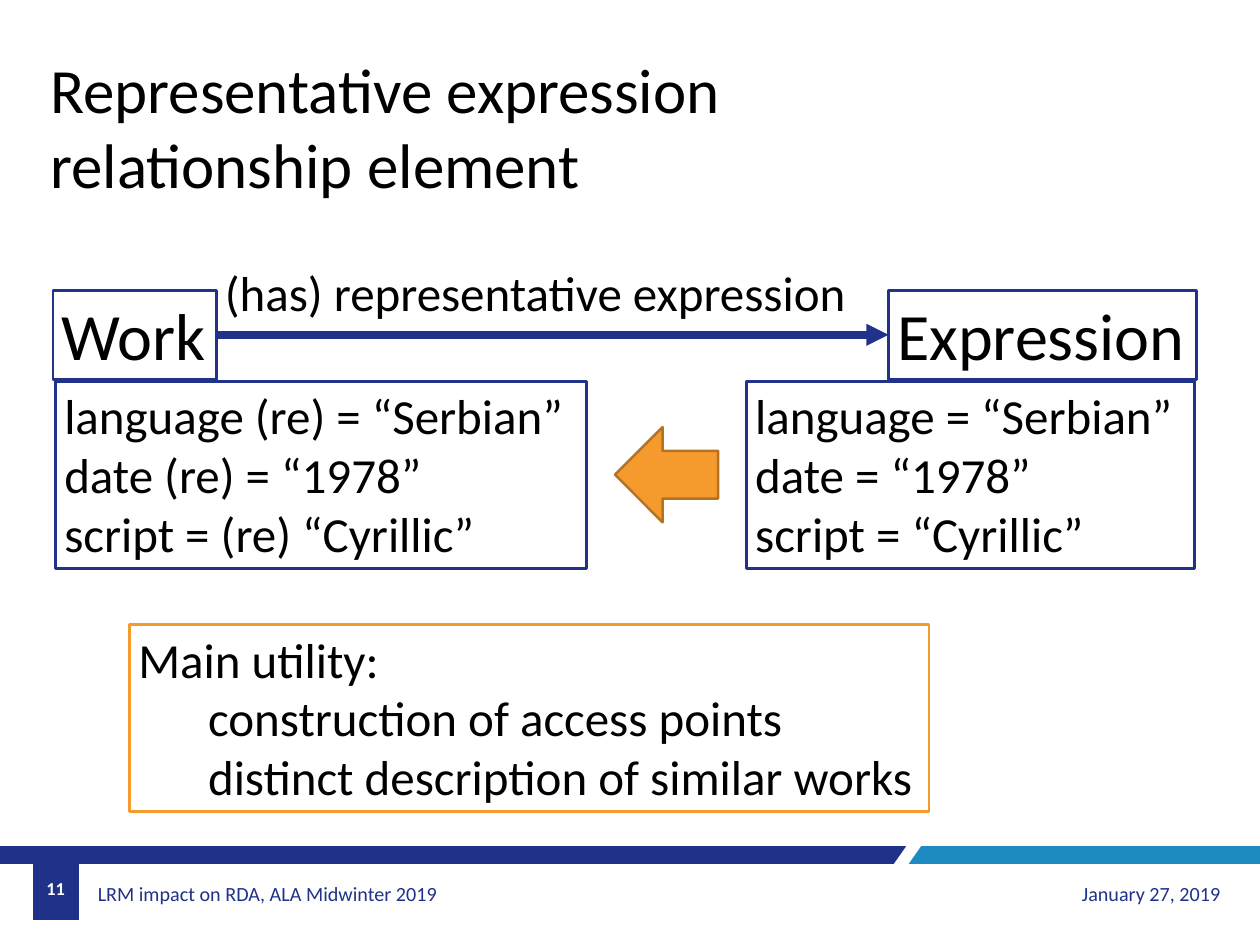
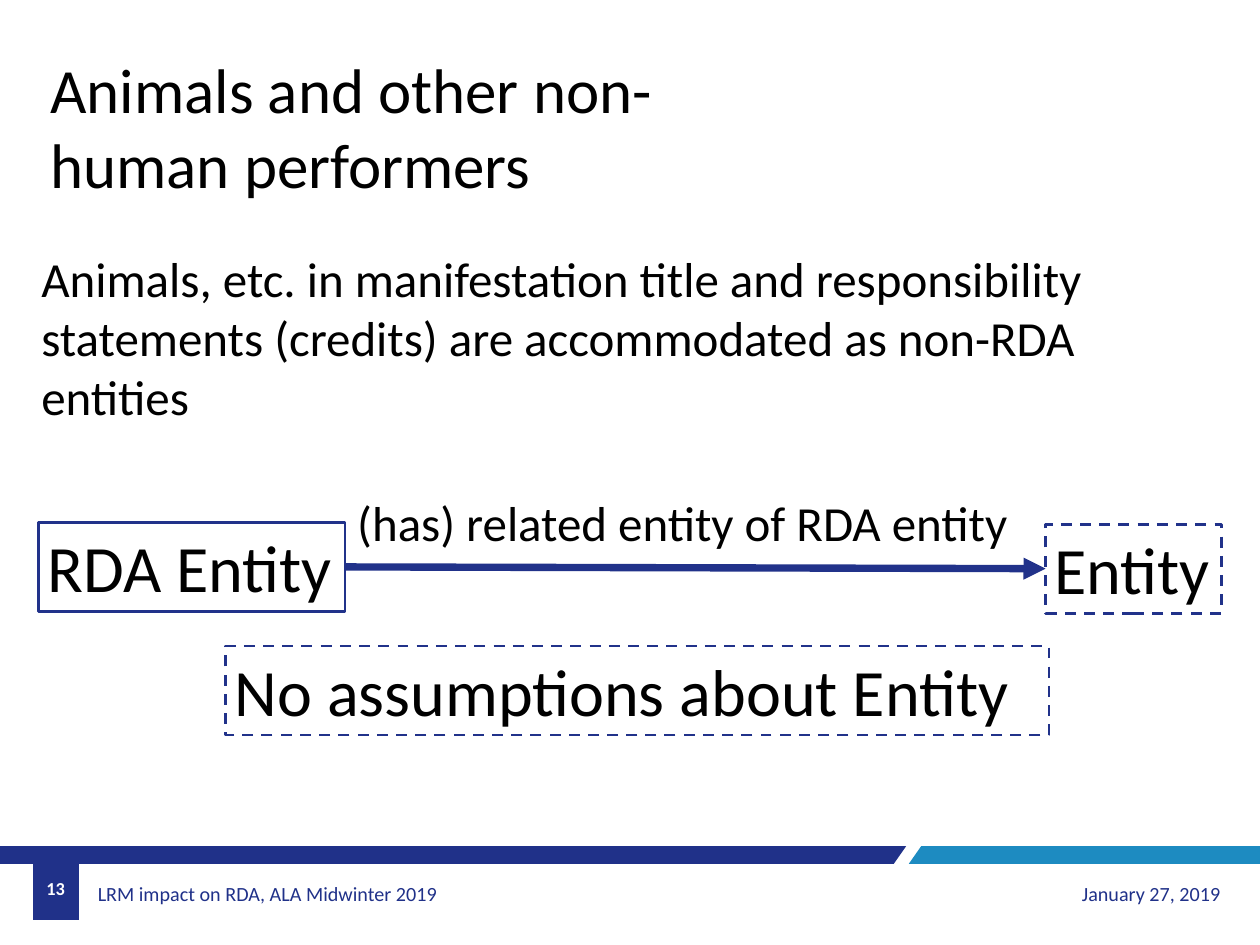
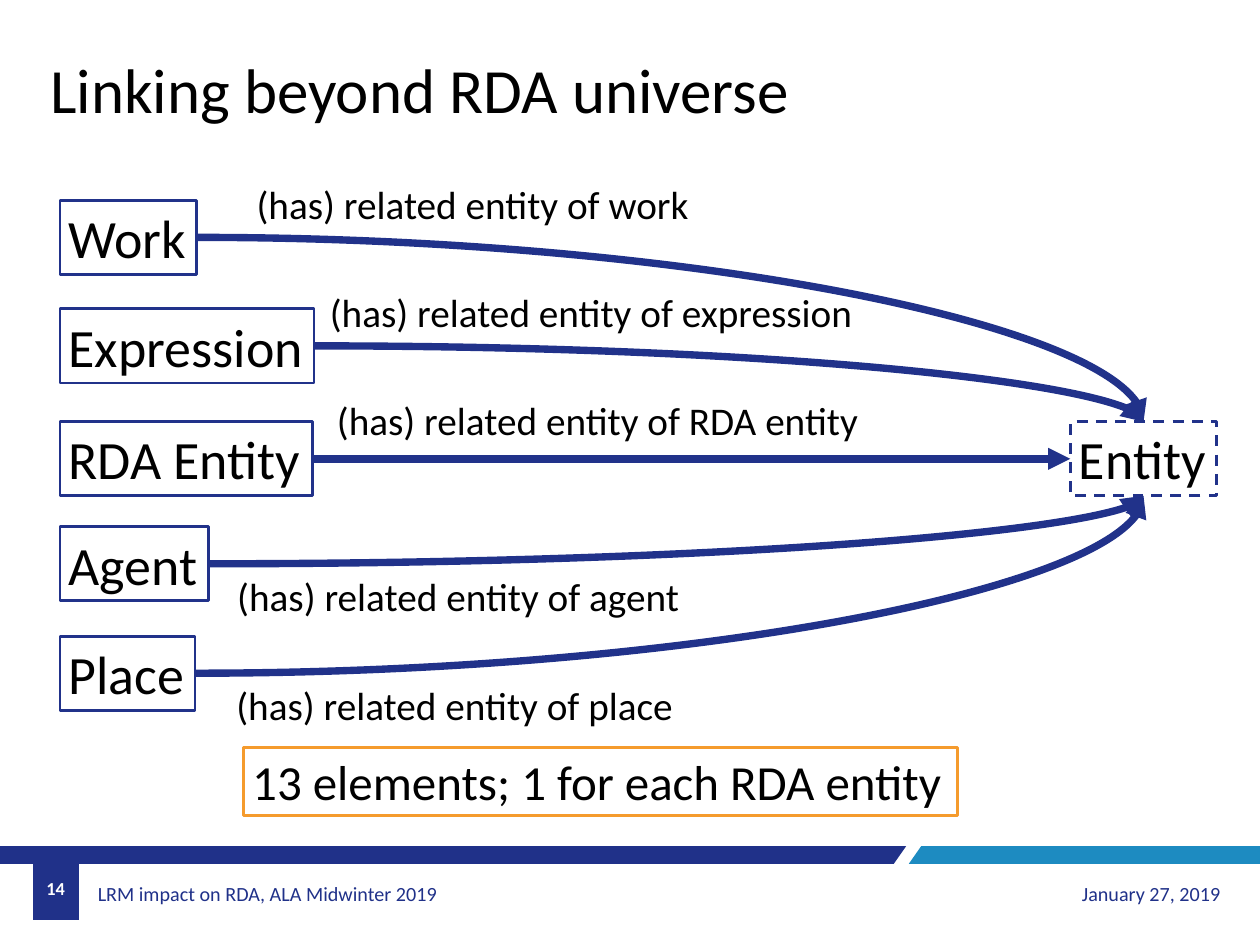
from pptx import Presentation
from pptx.dml.color import RGBColor
from pptx.enum.dml import MSO_LINE
from pptx.enum.shapes import MSO_CONNECTOR, MSO_SHAPE
from pptx.enum.text import MSO_ANCHOR, MSO_AUTO_SIZE, PP_ALIGN
from pptx.oxml.ns import qn
from pptx.util import Inches, Pt
from lxml.etree import SubElement

NAVY = RGBColor(0x20, 0x31, 0x89)
BLUE = RGBColor(0x21, 0x32, 0x8A)
SKY = RGBColor(0x1D, 0x8B, 0xC1)
GOLD = RGBColor(0xF5, 0x9B, 0x2D)
BROWN = RGBColor(0xB5, 0x73, 0x21)
BLACK = RGBColor(0, 0, 0)
WHITE = RGBColor(0xFF, 0xFF, 0xFF)


def put(slide, at, text, size, edge=None, dash=None, title=False,
        color=BLACK, bold=False, align=PP_ALIGN.LEFT, anchor=MSO_ANCHOR.TOP):
    """Write text in the title, in a box with an edge, or in a plain text box."""
    place = [Inches(n) for n in at]
    if title:
        shape = slide.shapes.title
        for name, value in zip(("left", "top", "width", "height"), place):
            setattr(shape, name, value)
    elif edge:
        shape = slide.shapes.add_shape(MSO_SHAPE.RECTANGLE, *place)
        shape.shadow.inherit = False
        shape.fill.solid()
        shape.fill.fore_color.rgb = WHITE
        shape.line.color.rgb = edge
        shape.line.width = Pt(2.25)
        shape.line.dash_style = dash
    else:
        shape = slide.shapes.add_textbox(*place)
    frame = shape.text_frame
    frame.text = text
    form = {"word_wrap": True, "auto_size": MSO_AUTO_SIZE.NONE,
            "vertical_anchor": anchor}
    if edge:
        form["margin_right"] = 0
    for name, value in form.items():
        setattr(frame, name, value)
    for par in frame.paragraphs:
        par.alignment = align
        par.font.color.rgb = color
        for name, value in {"name": "Calibri", "size": Pt(size), "bold": bold}.items():
            setattr(par.font, name, value)
    return shape


def join(slide, start, end, side=1):
    """Draw an arrow from the right of start to a side of end, curved unless side is left."""
    kind = MSO_CONNECTOR.STRAIGHT if side == 1 else MSO_CONNECTOR.CURVE
    link = slide.shapes.add_connector(kind, 0, 0, 0, 0)
    link.begin_connect(start, 3)
    link.end_connect(end, side)
    link.line.color.rgb = BLUE
    link.line.width = Pt(6)
    props = link.element.spPr
    if side != 1:
        props.find(qn("a:prstGeom")).set("prst", "curvedConnector2")
    SubElement(props.find(qn("a:ln")), qn("a:tailEnd"), type="triangle")
    SubElement(props, qn("a:effectLst"))


deck = Presentation()
deck.slide_width, deck.slide_height = Inches(14.28), Inches(10.71)
layout = deck.slide_layouts.get_by_name("Title Only")
for spare in list(layout.placeholders)[1:]:
    spare.element.getparent().remove(spare.element)

# Titles and page numbers
pages = []
for number, title in [
    (11, "Representative expression relationship element"),
    (13, "Animals and other non-human performers"),
    (14, "Linking beyond RDA universe"),
]:
    page = deck.slides.add_slide(layout)
    put(page, (0.47, 0.52, 8.92, 1.83), title, 51.4, title=True)
    put(page, (0.37, 9.79, 0.52, 0.55), str(number), 14.9, color=WHITE, bold=True,
        align=PP_ALIGN.CENTER, anchor=MSO_ANCHOR.MIDDLE)
    pages.append(page)
first, second, third = pages

# Bands and footer, moved to the layout so that every slide shares them
shared = []
for color, points in [
    (NAVY, [(10.27, 9.59), (0, 9.59), (0, 9.79), (10.13, 9.79)]),
    (SKY, [(14.28, 9.59), (10.44, 9.59), (10.3, 9.79), (14.28, 9.79)]),
    (NAVY, [(0.37, 10.43), (0.89, 10.43), (0.89, 9.59), (0.37, 9.59)]),
]:
    spots = [(Inches(x), Inches(y)) for x, y in points]
    pen = first.shapes.build_freeform(*spots[0])
    pen.add_line_segments(spots[1:], close=True)
    band = pen.convert_to_shape()
    band.shadow.inherit = False
    band.fill.solid()
    band.fill.fore_color.rgb = color
    band.line.fill.background()
    shared.append(band)
for at, text, align in [
    ((1.01, 9.85, 4.5, 0.55), "LRM impact on RDA, ALA Midwinter 2019", PP_ALIGN.LEFT),
    ((10.27, 9.85, 3.66, 0.55), "January 27, 2019", PP_ALIGN.RIGHT),
]:
    shared.append(put(first, at, text, 16.4, color=NAVY, align=align,
                      anchor=MSO_ANCHOR.MIDDLE))
for shape in shared:
    layout.shapes.element.append(shape.element)

# Representative expression
work = put(first, (0.6, 3.29, 1.85, 1.01), "Work", 54, BLUE)
expr = put(first, (10.07, 3.29, 3.49, 1.01), "Expression", 54, BLUE)
join(first, work, expr)
put(first, (2.45, 2.93, 7.31, 0.77), "(has) representative expression", 40)
put(first, (8.46, 4.32, 5.08, 2.12),
    "language = “Serbian”\ndate = “1978”\nscript = “Cyrillic”", 40, BLUE)
put(first, (0.63, 4.32, 6.02, 2.12),
    "language (re) = “Serbian”\ndate (re) = “1978”\nscript = (re) “Cyrillic”", 40, BLUE)
arrow = first.shapes.add_shape(MSO_SHAPE.LEFT_ARROW, Inches(6.97), Inches(4.84),
                               Inches(1.17), Inches(1.08))
arrow.shadow.inherit = False
arrow.fill.solid()
arrow.fill.fore_color.rgb = GOLD
arrow.line.color.rgb = BROWN
arrow.line.width = Pt(2)
uses = put(first, (1.47, 7.08, 9.06, 2.12),
           "Main utility:\nconstruction of access points\n"
           "distinct description of similar works", 40, GOLD)
for par in uses.text_frame.paragraphs[1:]:
    par._p.get_or_add_pPr().set("marL", str(Inches(0.79)))

# Non-human performers
put(second, (0.37, 2.77, 13.25, 2.12),
    "Animals, etc. in manifestation title and responsibility statements (credits) "
    "are accommodated as non-RDA entities", 40)
source = put(second, (0.44, 5.92, 3.47, 1.01), "RDA Entity", 54, BLUE)
target = put(second, (11.85, 5.94, 1.99, 1.01), "Entity", 54, BLUE, MSO_LINE.DASH)
join(second, source, target)
put(second, (3.95, 5.53, 7.65, 0.77), "(has) related entity of RDA entity", 40)
put(second, (2.56, 7.32, 9.33, 1.01), "No assumptions about Entity", 54, BLUE,
    MSO_LINE.DASH)

# Links beyond RDA: name, top and width of box, label and its place, side reached
target = put(third, (12.13, 4.78, 1.66, 0.84), "Entity", 44, BLUE, MSO_LINE.DASH)
for name, top, width, label, left, high, side in [
    ("RDA Entity", 4.78, 2.86, "RDA entity", 3.72, 4.44, 1),
    ("Work", 2.27, 1.55, "work", 2.81, 1.99, 0),
    ("Expression", 3.5, 2.88, "expression", 3.64, 3.22, 0),
    ("Agent", 5.97, 1.68, "agent", 2.59, 6.44, 2),
    ("Place", 7.21, 1.53, "place", 2.58, 7.67, 2),
]:
    source = put(third, (0.68, top, width, 0.84), name, 44, BLUE)
    put(third, (left, high, 6.2, 0.64), f"(has) related entity of {label}", 32)
    join(third, source, target, side)
put(third, (2.76, 8.47, 8.09, 0.77), "13 elements; 1 for each RDA entity", 40, GOLD)

deck.save("out.pptx")
